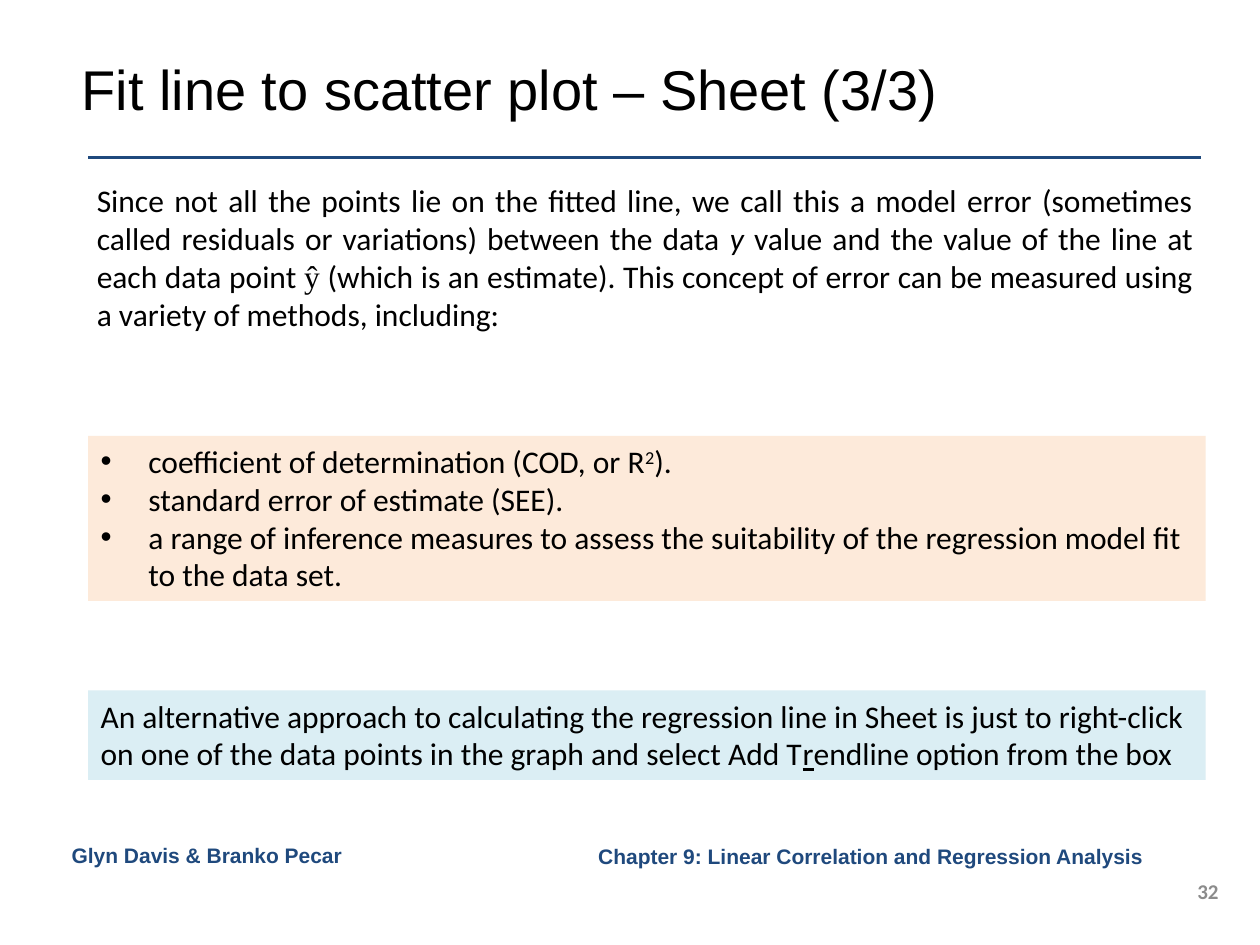
from lxml.etree import SubElement
from pptx import Presentation
from pptx.dml.color import RGBColor
from pptx.enum.shapes import MSO_CONNECTOR as Connector, MSO_SHAPE as Shape
from pptx.enum.text import MSO_ANCHOR as Anchor, PP_ALIGN as Align
from pptx.oxml.ns import qn
from pptx.util import Inches, Pt

WIDTH, HEIGHT = Inches(10), Inches(7.5)
NAVY, BLACK, GREY, PEACH, AQUA = "1F497D", "000000", "8C8C8C", "FDEADA", "DBEEF4"
BAND_LEFT, BAND_WIDTH = 7, 88.7


def color(value):
    return RGBColor.from_string(value)


def across(percent):
    return round(WIDTH * percent / 100)


def down(percent):
    return round(HEIGHT * percent / 100)


def place(left, top, width, height):
    return across(left), down(top), across(width), down(height)


def add_span(para, text, size=18, font="Calibri", ink=BLACK, bold=False,
             italic=False, underline=False, raised=False):
    span = para.add_run()
    span.text = text
    span.font.size = Pt(size)
    span.font.name = font
    span.font.color.rgb = color(ink)
    span.font.bold = bold
    span.font.italic = italic
    span.font.underline = underline
    if raised:
        span.font._element.set("baseline", "30000")


def add_bullet(para):
    props = para._p.get_or_add_pPr()
    indent = Inches(0.38)
    props.set("marL", str(indent))
    props.set("indent", str(-indent))
    SubElement(props, qn("a:buFont"), typeface="Arial")
    SubElement(props, qn("a:buChar"), char="•")


def write(box, paras, align=Align.LEFT, anchor=Anchor.TOP, bullets=False, **style):
    frame = box.text_frame
    frame.word_wrap = True
    frame.vertical_anchor = anchor
    for index, spans in enumerate(paras):
        para = frame.add_paragraph() if index else frame.paragraphs[0]
        para.alignment = align
        if bullets:
            add_bullet(para)
        for text, changes in spans:
            add_span(para, text, **{**style, **changes})


def add_text(page, area, paras, **style):
    write(page.shapes.add_textbox(*place(*area)), paras, **style)


def add_label(page, area, text, **style):
    add_text(page, area, [[(text, {})]], **style)


def add_band(page, top, height, fill, paras, **style):
    box = page.shapes.add_shape(Shape.RECTANGLE, *place(BAND_LEFT, top, BAND_WIDTH, height))
    box.shadow.inherit = False
    box.fill.solid()
    box.fill.fore_color.rgb = color(fill)
    box.line.fill.background()
    write(box, paras, **style)


def add_rule(page, left, right, top):
    rule = page.shapes.add_connector(
        Connector.STRAIGHT, across(left), down(top), across(right), down(top))
    rule.line.color.rgb = color(NAVY)
    rule.line.width = Pt(2)
    SubElement(rule._element.spPr, qn("a:effectLst"))


def main():
    deck = Presentation()
    deck.slide_width, deck.slide_height = WIDTH, HEIGHT
    page = deck.slides.add_slide(deck.slide_layouts[6])
    footer = dict(size=12, font="Arial", ink=NAVY, bold=True)

    add_rule(page, BAND_LEFT, 95.3, 16.67)
    add_label(page, (36.7, 88.53, 55.5, 4.13),
              "Chapter 9: Linear Correlation and Regression Analysis ",
              align=Align.RIGHT, anchor=Anchor.MIDDLE, **footer)
    add_label(page, (5.5, 4.13, 75.8, 10.4), "Fit line to scatter plot – Sheet (3/3)",
              size=32, font="Arial", anchor=Anchor.MIDDLE)
    add_label(page, (93, 92.67, 4.7, 3.2), "32", size=12, ink=GREY, bold=True,
              align=Align.RIGHT, anchor=Anchor.MIDDLE)
    add_label(page, (4.7, 88.53, 29.7, 4.13), "Glyn Davis & Branko Pecar", **footer)

    add_text(page, (6.7, 18.53, 89, 17.47), [[
        ("Since not all the points lie on the fitted line, we call this a model error "
         "(sometimes called residuals or variations) between the data ", {}),
        ("y", {"italic": True}),
        (" value and the value of the line at each data point ", {}),
        ("ŷ", {"font": "Times New Roman"}),
        (" (which is an estimate). This concept of error can be measured using "
         "a variety of methods, including:", {}),
    ]], align=Align.JUSTIFY)

    add_band(page, 46.13, 17.47, PEACH, [
        [("coefficient of determination (COD, or R", {}), ("2", {"raised": True}), (").", {})],
        [("standard error of estimate (SEE).", {})],
        [("a range of inference measures to assess the suitability of the regression "
          "model fit to the data set.", {})],
    ], bullets=True)

    add_band(page, 73.07, 9.47, AQUA, [[
        ("An alternative approach to calculating the regression line in Sheet is just to "
         "right-click on one of the data points in the graph and select Add T", {}),
        ("r", {"underline": True}),
        ("endline option from the box", {}),
    ]])

    deck.save("out.pptx")


if __name__ == "__main__":
    main()
